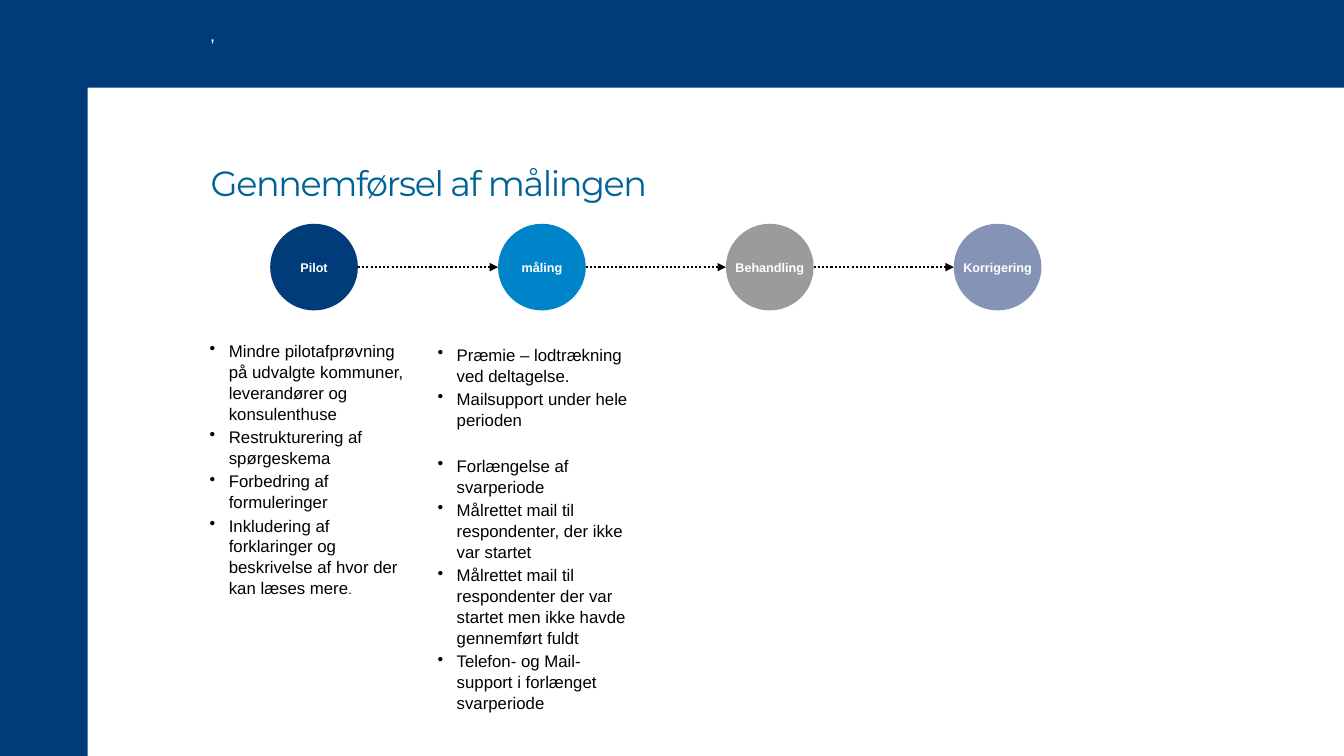
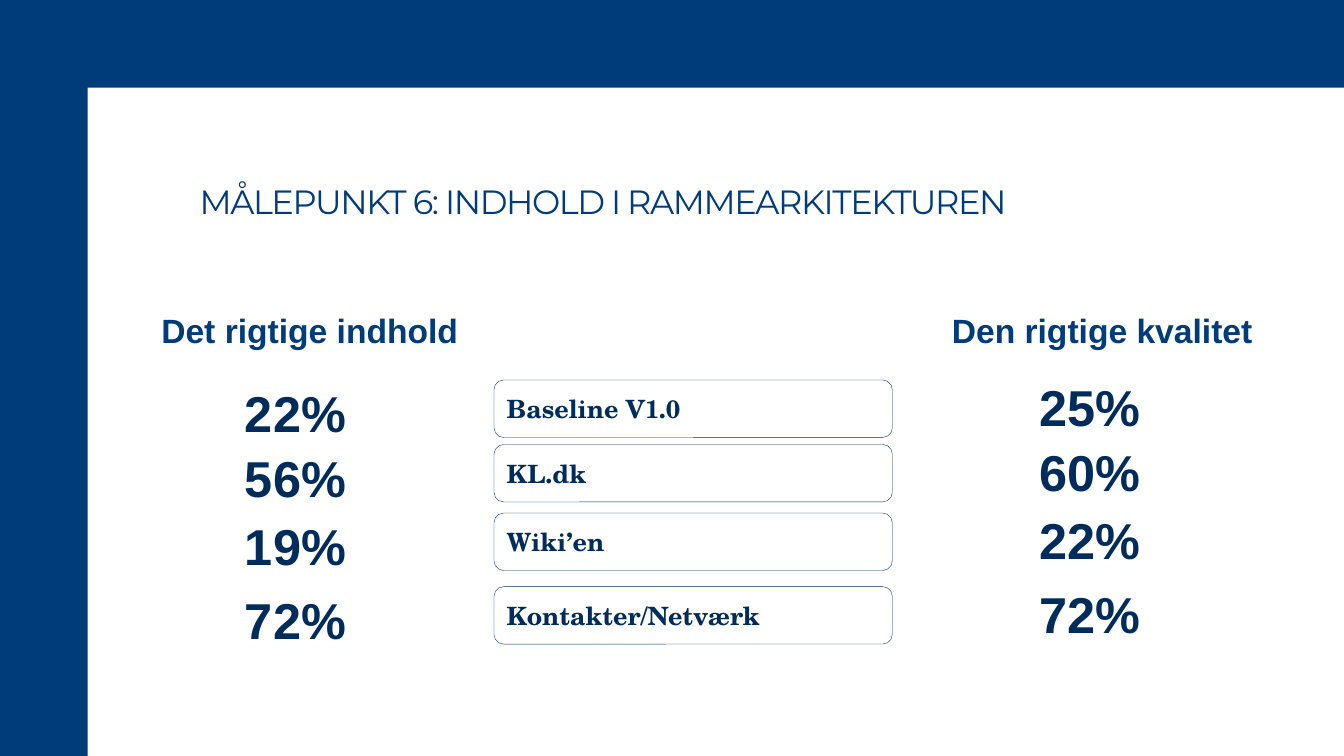
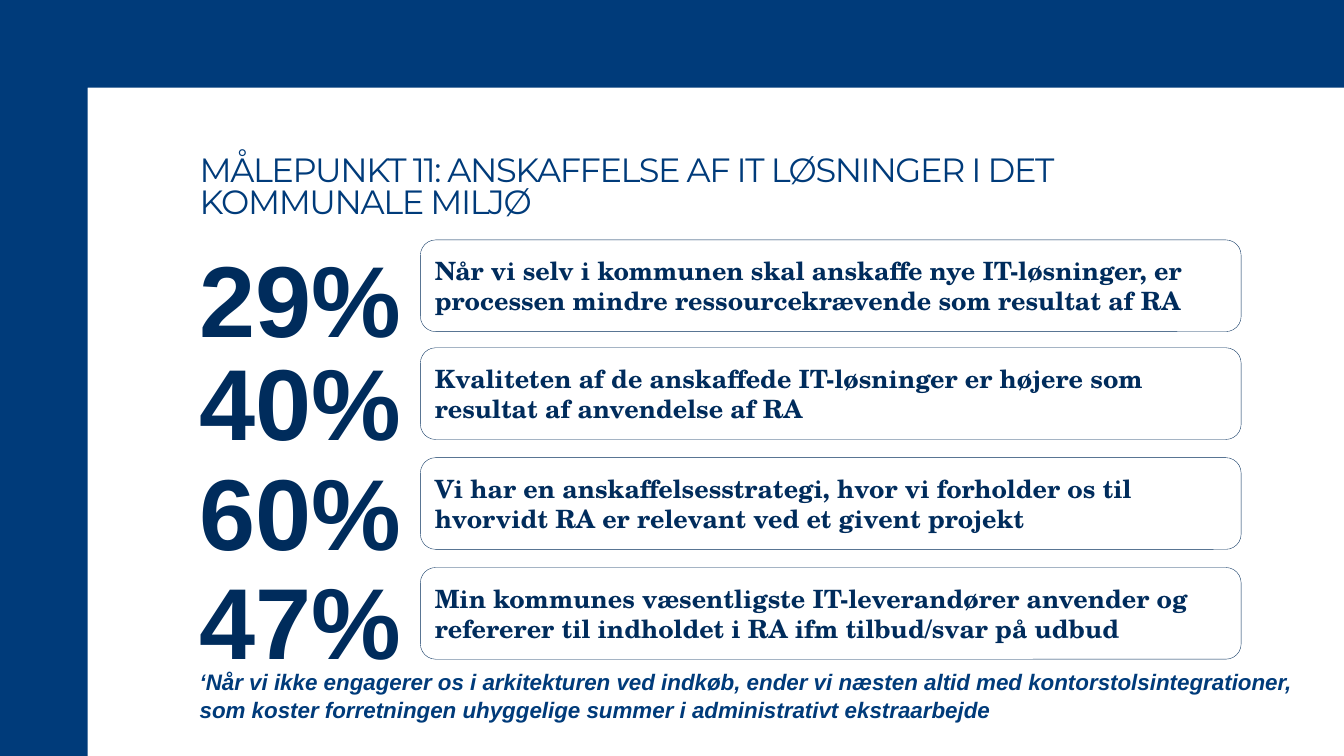
from lxml.etree import SubElement
from pptx import Presentation
from pptx.dml.color import RGBColor
from pptx.enum.dml import MSO_LINE
from pptx.enum.shapes import MSO_CONNECTOR, MSO_SHAPE
from pptx.enum.text import MSO_ANCHOR, PP_ALIGN
from pptx.oxml.ns import qn
from pptx.util import Inches, Pt

COLORS = {
    "navy": "003B7A",
    "ink": "002C5C",
    "outline": "002C5A",
    "teal": "006397",
    "blue": "0084C9",
    "gray": "9B9B9B",
    "lilac": "8493B6",
    "white": "FFFFFF",
    "black": "000000",
}
WIDTH, HEIGHT, BAND = 13.33, 7.5, 0.87
LINE_SPACING = 1.04

STEPS = [("Pilot", "navy"), ("måling", "blue"), ("Behandling", "gray"), ("Korrigering", "lilac")]
PILOT = [
    "Mindre pilotafprøvning på udvalgte kommuner, leverandører og konsulenthuse",
    "Restrukturering af spørgeskema",
    "Forbedring af formuleringer",
    "Inkludering af forklaringer og beskrivelse af hvor der kan læses mere",
]
SURVEY = [
    "Præmie – lodtrækning ved deltagelse.",
    "Mailsupport under hele perioden",
    "Forlængelse af svarperiode",
    "Målrettet mail til respondenter, der ikke var startet",
    "Målrettet mail til respondenter der var startet men ikke havde gennemført fuldt",
    "Telefon- og Mail- support i forlænget svarperiode",
]
CHANNELS = [
    (3.77, "22%", "Baseline V1.0", "25%"),
    (4.41, "56%", "KL.dk", "60%"),
    (5.09, "19%", "Wiki’en", "22%"),
    (5.82, "72%", "Kontakter/Netværk", "72%"),
]
STATEMENTS = [
    (2.38, 2.3, "29%", "Når vi selv i kommunen skal anskaffe nye IT-løsninger, er "
     "processen mindre ressourcekrævende som resultat af RA"),
    (3.45, 3.32, "40%", "Kvaliteten af de anskaffede IT-løsninger er højere som "
     "resultat af anvendelse af RA"),
    (4.54, 4.41, "60%", "Vi har en anskaffelsesstrategi, hvor vi forholder os til "
     "hvorvidt RA er relevant ved et givent projekt"),
    (5.63, 5.5, "47%", "Min kommunes væsentligste IT-leverandører anvender og "
     "refererer til indholdet i RA ifm tilbud/svar på udbud"),
]
QUOTE = [
    "‘Når vi ikke engagerer os i arkitekturen ved indkøb, ender vi næsten altid med "
    "kontorstolsintegrationer,",
    "som koster forretningen uhyggelige summer i administrativt ekstraarbejde",
]


def rgb(name):
    """Return the named palette colour."""
    return RGBColor.from_string(COLORS[name])


def add_run(p, text, size=12, color="ink", font="Arial", bold=False, italic=False, tracking=None):
    """Append a formatted run to a paragraph."""
    r = p.add_run()
    r.text = text
    r.font.size, r.font.name = Pt(size), font
    r.font.bold, r.font.italic = bold, italic
    r.font.color.rgb = rgb(color)
    if tracking is not None:
        r.font._element.set("spc", str(int(tracking * 100)))


def set_margins(tf, right=0):
    """Remove the text insets, except an optional right one."""
    tf.margin_left = tf.margin_top = tf.margin_bottom = 0
    tf.margin_right = Inches(right)


def add_text(slide, lines, x, y, w, h, wrap=False, anchor=MSO_ANCHOR.TOP,
             spacing=LINE_SPACING, **fmt):
    """Add a text box with one paragraph per line."""
    tf = slide.shapes.add_textbox(Inches(x), Inches(y), Inches(w), Inches(h)).text_frame
    set_margins(tf)
    tf.word_wrap, tf.vertical_anchor = wrap, anchor
    for i, line in enumerate(lines):
        p = tf.add_paragraph() if i else tf.paragraphs[0]
        p.line_spacing = spacing
        add_run(p, line, **fmt)
    return tf


def add_title(slide, text, x=1.98, y=1.27, w=8.94, size=24, color="navy"):
    """Add the slide title."""
    add_text(slide, [text], x, y, w, 0.92, wrap=True, anchor=MSO_ANCHOR.BOTTOM,
             spacing=0.8, size=size, color=color, font="Montserrat", tracking=-1)


def add_bullets(slide, items, x, y):
    """Add a narrow bulleted column."""
    tf = add_text(slide, items, x, y, 2.07, 3.84, wrap=True, color="black")
    set_margins(tf, right=0.09)
    for p in tf.paragraphs:
        pPr = p._p.get_or_add_pPr()
        pPr.set("marL", str(Inches(0.19)))
        pPr.set("indent", str(-Inches(0.19)))
        SubElement(pPr, qn("a:buChar"), char="•")
        p.space_after = Pt(1.7)
    return tf


def add_step(slide, text, color, x, y):
    """Add a process circle."""
    sp = slide.shapes.add_shape(MSO_SHAPE.OVAL, Inches(x), Inches(y), Inches(0.87), Inches(0.86))
    sp.shadow.inherit = False
    sp.fill.solid()
    sp.fill.fore_color.rgb = rgb(color)
    sp.line.fill.background()
    tf = sp.text_frame
    set_margins(tf)
    tf.word_wrap, tf.vertical_anchor = False, MSO_ANCHOR.MIDDLE
    p = tf.paragraphs[0]
    p.alignment = PP_ALIGN.CENTER
    add_run(p, text, size=9, color="white", bold=True)


def add_arrow(slide, x1, x2, y):
    """Add a dotted horizontal arrow."""
    line = slide.shapes.add_connector(MSO_CONNECTOR.STRAIGHT, Inches(x1), Inches(y),
                                      Inches(x2), Inches(y))
    line.line.color.rgb = rgb("black")
    line.line.width = Pt(1.5)
    line.line.dash_style = MSO_LINE.ROUND_DOT
    SubElement(line.line._get_or_add_ln(), qn("a:tailEnd"), type="triangle")
    SubElement(line._element.spPr, qn("a:effectLst"))


def add_card(slide, text, x, y, w, h):
    """Add an outlined rounded box with a statement."""
    sp = slide.shapes.add_shape(MSO_SHAPE.ROUNDED_RECTANGLE, Inches(x), Inches(y),
                                Inches(w), Inches(h))
    sp.shadow.inherit = False
    sp.fill.background()
    sp.line.color.rgb = rgb("outline")
    sp.line.width = Pt(0.25)
    tf = sp.text_frame
    tf.word_wrap, tf.vertical_anchor = True, MSO_ANCHOR.MIDDLE
    p = tf.paragraphs[0]
    p.alignment = PP_ALIGN.LEFT
    add_run(p, text, size=18, font="TeX Gyre Schola", bold=True)


def add_slide(prs):
    """Add a blank slide with the navy corner band."""
    slide = prs.slides.add_slide(prs.slide_layouts[6])
    outline = [(0, 0), (WIDTH, 0), (WIDTH, BAND), (BAND, BAND), (BAND, HEIGHT), (0, HEIGHT)]
    points = [(Inches(x), Inches(y)) for x, y in outline]
    builder = slide.shapes.build_freeform(*points[0])
    builder.add_line_segments(points[1:], close=True)
    sp = builder.convert_to_shape()
    sp.shadow.inherit = False
    sp.fill.solid()
    sp.fill.fore_color.rgb = rgb("navy")
    sp.line.fill.background()
    return slide


def build_process(prs):
    """Build the slide on how the survey was carried out."""
    slide = add_slide(prs)
    add_text(slide, ["’"], 2.09, 0, 9.97, BAND, wrap=True, anchor=MSO_ANCHOR.MIDDLE,
             spacing=1, size=10, color="white", bold=True)
    add_title(slide, "Gennemførsel af målingen", x=2.09, y=1.1, size=25, color="teal")
    left, pitch = 2.68, 2.26
    for i, (text, color) in enumerate(STEPS):
        x = left + i * pitch
        add_step(slide, text, color, x, 2.22)
        if i:
            add_arrow(slide, x - pitch + 0.87, x, 2.65)
    pilot = add_bullets(slide, PILOT, 2.08, 3.37)
    add_run(pilot.paragraphs[-1], ".", size=9, color="black")
    survey = add_bullets(slide, SURVEY, 4.34, 3.41)
    survey.paragraphs[2].space_before = Pt(16)


def build_content(prs):
    """Build the slide on content and quality per channel."""
    slide = add_slide(prs)
    add_title(slide, "MÅLEPUNKT 6: INDHOLD I RAMMEARKITEKTUREN")
    for text, x, w in [("Det rigtige indhold", 1.6, 2.97), ("Den rigtige kvalitet", 9.44, 3.01)]:
        add_text(slide, [text], x, 3.06, w, 0.42, size=24, color="navy", bold=True)
    for y, content, channel, quality in CHANNELS:
        add_card(slide, channel, 4.9, y, 3.95, 0.57)
        for text, x, top in [(content, 2.43, y), (quality, 10.31, y - 0.06)]:
            add_text(slide, [text], x, top, 1.01, 0.63, size=36, bold=True)


def build_procurement(prs):
    """Build the slide on procurement of IT solutions."""
    slide = add_slide(prs)
    add_title(slide, "MÅLEPUNKT 11: ANSKAFFELSE AF IT LØSNINGER I DET KOMMUNALE MILJØ", w=9.24)
    for y, share_y, share, statement in STATEMENTS:
        add_card(slide, statement, 4.17, y, 8.14, 0.91)
        add_text(slide, [share], 1.98, share_y, 2.02, 1.26, size=72, bold=True)
    add_text(slide, QUOTE, 1.98, 6.62, 10.98, 0.56, size=16, color="navy", bold=True, italic=True)


def main():
    """Build and save the presentation."""
    prs = Presentation()
    prs.slide_width, prs.slide_height = Inches(WIDTH), Inches(HEIGHT)
    build_process(prs)
    build_content(prs)
    build_procurement(prs)
    prs.save("out.pptx")


if __name__ == "__main__":
    main()
